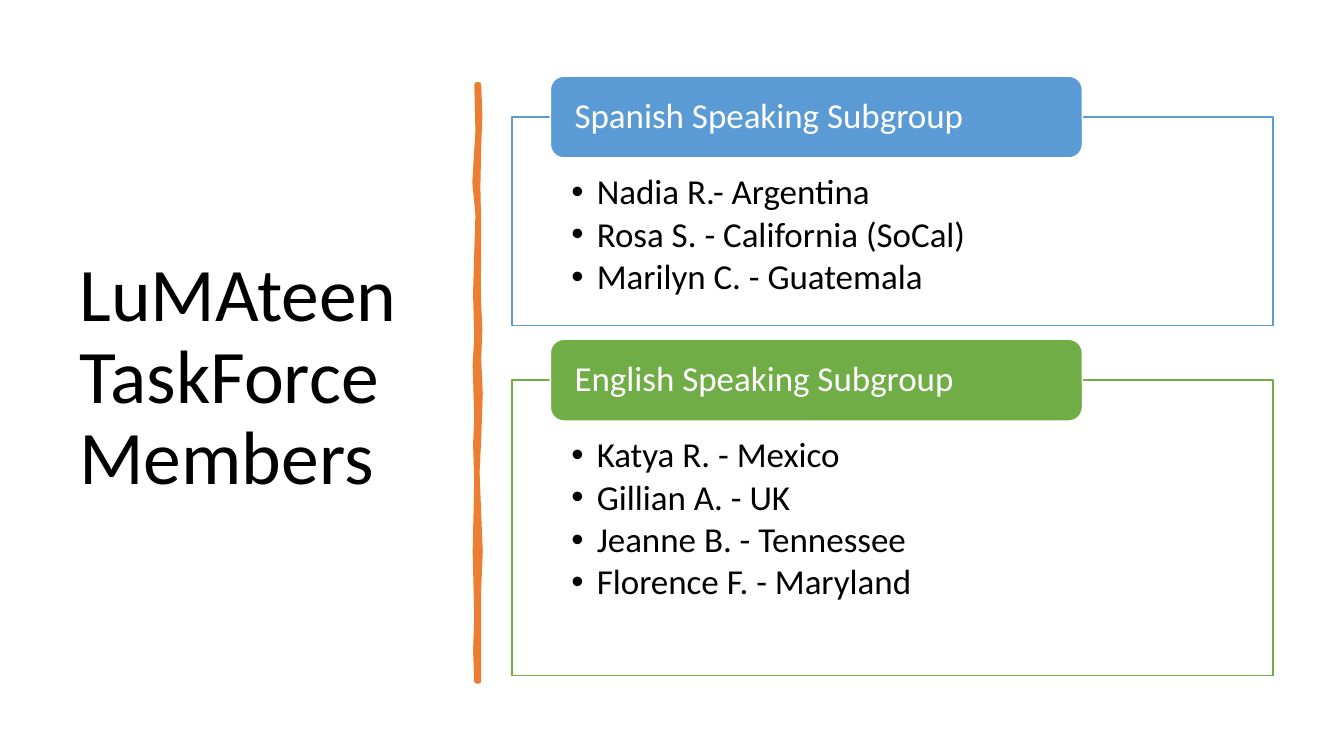
from pptx import Presentation
from pptx import util as u
from pptx.dml.color import RGBColor
from pptx.enum import shapes, text
from pptx.oxml import parse_xml
from pptx.oxml.ns import nsdecls

Cm, Pt = u.Cm, u.Pt
COLORS = {name: RGBColor.from_string(value) for name, value in {
    "black": "000000", "white": "FFFFFF", "orange": "ED7D31",
    "blue": "5B9BD5", "green": "70AD47"}.items()}


def paint(shape, fill, line, width):
    shape.shadow.inherit = False
    shape.fill.solid()
    shape.fill.fore_color.rgb = COLORS[fill]
    shape.line.color.rgb = COLORS[line]
    shape.line.width = Pt(width)


def style(paragraph, size, color):
    paragraph.alignment = text.PP_ALIGN.LEFT
    paragraph.line_spacing = 0.9
    paragraph.font.name = "Calibri"
    paragraph.font.size = Pt(size)
    paragraph.font.color.rgb = COLORS[color]


prs = Presentation()
prs.slide_width, prs.slide_height = Cm(33.87), Cm(19.05)
slide = prs.slides.add_slide(prs.slide_layouts[6])

# Title
title = slide.shapes.add_textbox(Cm(1.75), Cm(1.78), Cm(9.5), Cm(15.52)).text_frame
title.word_wrap = True
title.vertical_anchor = text.MSO_ANCHOR.MIDDLE
title.text = "LuMAteen TaskForce Members"
style(title.paragraphs[0], 54, "black")

# Hand-drawn divider: right edge downwards, then left edge upwards
right_edge = [(12.07, 2.13), (12.1, 2.9), (12.07, 3.71), (12.05, 4.7), (12.07, 5.74),
              (12.06, 7.47), (12.1, 8.3), (12.07, 9.04), (12.11, 9.9), (12.07, 11.07),
              (12.03, 11.9), (12.07, 12.95), (12.11, 13.9), (12.07, 14.83), (12.07, 17.17)]
left_edge = [(12.01, 17.17), (11.98, 16.4), (12.01, 15.57), (11.97, 13.9), (12.01, 12.1),
             (11.98, 11.2), (12.01, 10.54), (11.97, 9.2), (12.01, 8.51), (11.98, 7.4),
             (12.01, 6.35), (12.04, 5.4), (11.96, 4.6), (12.04, 3.3), (12.01, 2.13)]
outline = [(Cm(x), Cm(y)) for x, y in right_edge + left_edge]
builder = slide.shapes.build_freeform(*outline[0])
builder.add_line_segments(outline[1:], close=True)
paint(builder.convert_to_shape(), "orange", "orange", 3.25)

# Subgroups: a framed member list with a heading tab across its top edge
subgroups = [
    ("Spanish Speaking Subgroup", "blue", 2.95, 5.26,
     ["Nadia R.- Argentina", "Rosa S. - California (SoCal)", "Marilyn C. - Guatemala"]),
    ("English Speaking Subgroup", "green", 9.58, 7.44,
     ["Katya R. - Mexico", "Gillian A. - UK", "Jeanne B. - Tennessee",
      "Florence F. - Maryland"]),
]
tab_height = 2.06
for heading, color, top, height, members in subgroups:
    panel = slide.shapes.add_shape(shapes.MSO_SHAPE.RECTANGLE,
                                   Cm(12.9), Cm(top), Cm(19.18), Cm(height))
    paint(panel, "white", color, 1)
    member_list = panel.text_frame
    member_list.word_wrap = True
    member_list.vertical_anchor = text.MSO_ANCHOR.TOP
    member_list.margin_left = member_list.margin_right = Cm(1.5)
    member_list.margin_top, member_list.margin_bottom = Cm(1.45), Cm(0.48)
    member_list.text = "\n".join(members)
    for member in member_list.paragraphs:
        properties = member._p.get_or_add_pPr()
        properties.set("marL", str(Cm(0.64)))
        properties.set("indent", str(-Cm(0.64)))
        properties.append(parse_xml(f'<a:buFont {nsdecls("a")} typeface="Arial"/>'))
        properties.append(parse_xml(f'<a:buChar {nsdecls("a")} char="•"/>'))
        style(member, 25, "black")
        member.space_after = Pt(3.25)

    tab = slide.shapes.add_shape(shapes.MSO_SHAPE.ROUNDED_RECTANGLE, Cm(13.87),
                                 Cm(top - tab_height / 2), Cm(13.41), Cm(tab_height))
    paint(tab, color, "white", 1)
    label = tab.text_frame
    label.word_wrap = True
    label.vertical_anchor = text.MSO_ANCHOR.MIDDLE
    label.margin_left = label.margin_right = Cm(0.51)
    label.margin_top = label.margin_bottom = 0
    label.text = heading
    style(label.paragraphs[0], 25, "white")

prs.save("out.pptx")
